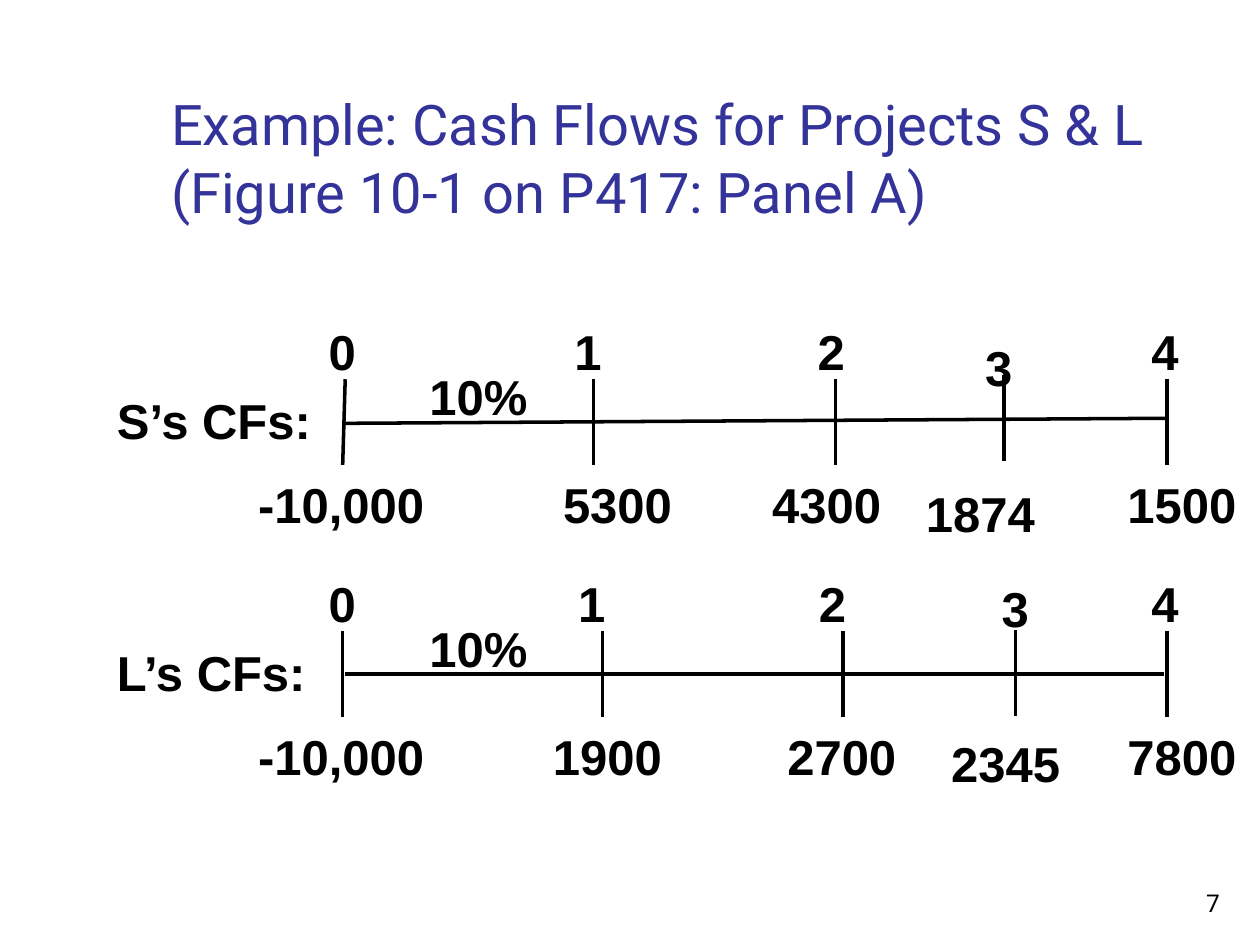
from pptx import Presentation
from pptx.dml.color import RGBColor
from pptx.enum.shapes import MSO_CONNECTOR
from pptx.enum.text import MSO_ANCHOR, PP_ALIGN
from pptx.oxml.ns import qn
from pptx.util import Inches, Pt
from lxml import etree

STRAIGHT = MSO_CONNECTOR.STRAIGHT
TOP, BOTTOM = MSO_ANCHOR.TOP, MSO_ANCHOR.BOTTOM
LEFT, RIGHT = PP_ALIGN.LEFT, PP_ALIGN.RIGHT

BLACK, BLUE = "000000", "333399"
LABEL = {"name": "Arial", "size": Pt(28), "bold": True}
TITLE = {"name": "Roboto", "size": Pt(32)}
NUMBER = {"name": "Roboto", "size": Pt(14)}

TITLE_TEXT = "Example: Cash Flows for Projects S & L (Figure 10-1 on P417: Panel A)"
RATE = "10%"
PERIOD_DY, TICK_DY, FLOW_DY = 0, 0.51, 1.22
RATE_DY, NAME_DY = 0.36, 0.55
TICK_H, TEXT_H = 0.68, 0.57

# period, period (x, w), cash flow, flow (x, w), tick (x top, x bottom), dy (period, tick, flow), wrap
PROJECTS = [
    {"name": "S’s CFs:", "name_w": 1.76, "top": 2.5,
     "axis": (2.73, 3.36, 9.25, 3.32),
     "steps": [
         ("0", (2.51, 0.41), "-10,000", (1.95, 1.53), (2.74, 2.72), (0, 0, 0), False),
         ("1", (4.46, 0.7), "5300", (4.37, 1.08), (4.71, 4.71), (0, 0, 0), True),
         ("2", (6.39, 0.41), "4300", (6.03, 1.14), (6.63, 6.63), (0, 0, 0), True),
         ("3", (7.72, 0.43), "1874", (7.25, 1.18), (7.97, 7.97), (0.13, -0.03, 0.07), True),
         ("4", (9.04, 0.42), "1500", (8.85, 1.07), (9.26, 9.26), (0, 0, 0), False),
     ]},
    {"name": "L’s CFs:", "name_w": 1.71, "top": 4.5,
     "axis": (2.74, 5.35, 9.24, 5.35),
     "steps": [
         ("0", (2.51, 0.41), "-10,000", (1.95, 1.53), (2.72, 2.72), (0, 0, 0), False),
         ("1", (4.49, 0.67), "1900", (4.29, 1.33), (4.78, 4.78), (0, 0, 0), True),
         ("2", (6.4, 0.76), "2700", (6.15, 1.21), (6.69, 6.69), (0, 0, 0), True),
         ("3", (7.85, 0.31), "2345", (7.45, 1.11), (8.06, 8.06), (0.04, -0.01, 0.05), True),
         ("4", (9.04, 0.42), "7800", (8.85, 1.07), (9.26, 9.26), (0, 0, 0), False),
     ]},
]


def rgb(color):
    return RGBColor.from_string(color)


def add_text(s, text, x, y, w, h=TEXT_H, font=LABEL, color=BLACK,
             align=LEFT, anchor=TOP, wrap=True):
    tf = s.shapes.add_textbox(Inches(x), Inches(y), Inches(w), Inches(h)).text_frame
    tf.word_wrap = wrap
    tf.vertical_anchor = anchor
    p = tf.paragraphs[0]
    p.alignment = align
    r = p.add_run()
    r.text = text
    for key, value in font.items():
        setattr(r.font, key, value)
    r.font.color.rgb = rgb(color)


def add_line(s, x1, y1, x2, y2):
    line = s.shapes.add_connector(STRAIGHT, Inches(x1), Inches(y1), Inches(x2), Inches(y2))
    line.line.color.rgb = rgb(BLACK)
    line.line.width = Pt(2)
    etree.SubElement(line._element.spPr, qn("a:effectLst"))


def add_timeline(s, project):
    top = project["top"]
    add_line(s, *project["axis"])
    add_text(s, project["name"], 0.83, top + NAME_DY, project["name_w"], wrap=False)
    add_text(s, RATE, 3.31, top + RATE_DY, 0.98, wrap=False)
    for period, (px, pw), flow, (fx, fw), (x1, x2), (p_dy, t_dy, f_dy), wrap in project["steps"]:
        tick_y = top + TICK_DY + t_dy
        add_line(s, x1, tick_y, x2, tick_y + TICK_H)
        add_text(s, period, px, top + PERIOD_DY + p_dy, pw, wrap=wrap)
        add_text(s, flow, fx, top + FLOW_DY + f_dy, fw, wrap=wrap)


def main():
    prs = Presentation()
    prs.slide_width, prs.slide_height = Inches(10), Inches(7.5)
    s = prs.slides.add_slide(prs.slide_layouts[6])
    add_text(s, "7", 7.7, 6.83, 2.08, 0.5, NUMBER, align=RIGHT, anchor=BOTTOM)
    add_text(s, TITLE_TEXT, 1.26, 0.23, 8.24, 1.6, TITLE, BLUE, anchor=BOTTOM)
    for project in PROJECTS:
        add_timeline(s, project)
    prs.save("out.pptx")


if __name__ == "__main__":
    main()
